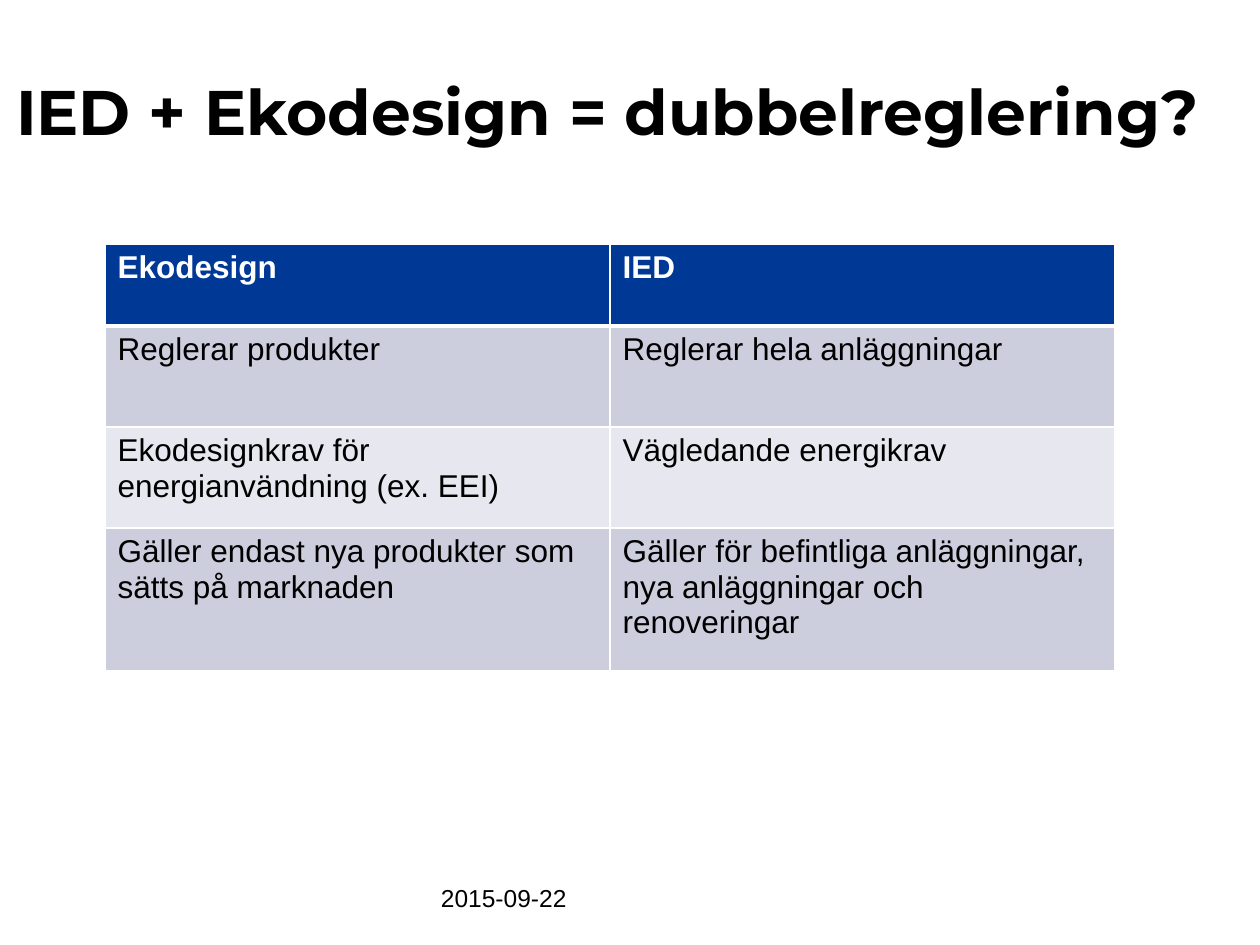
from dataclasses import dataclass

from lxml import etree
from pptx import Presentation
from pptx import util as u
from pptx.dml.color import RGBColor
from pptx.enum import text
from pptx.oxml.ns import qn

SCALE = 914400 / 126  # EMU in one px


@dataclass(frozen=True)
class Theme:
    black: str = "000000"
    white: str = "FFFFFF"
    head: str = "003896"
    bands: tuple = ("CCCEDD", "E7E8EF")
    title: int = 36
    body: int = 18
    date: int = 14
    bold_font: str = "Montserrat"
    font: str = "Arial"


@dataclass(frozen=True)
class Row:
    high: int
    cells: tuple


THEME = Theme()
ROWS = (
    Row(82, ("Ekodesign", "IED")),
    Row(101, ("Reglerar produkter", "Reglerar hela anläggningar")),
    Row(101, ("Ekodesignkrav för energianvändning (ex. EEI)",
              "Vägledande energikrav")),
    Row(143, ("Gäller endast nya produkter som sätts på marknaden",
              "Gäller för befintliga anläggningar, nya anläggningar och renoveringar")),
)


def px(n: int) -> u.Emu:
    return u.Emu(round(n * SCALE))


def box(*sides: int) -> list:
    return [px(n) for n in sides]


def write(frame, words: str, *, size: int, color: str = THEME.black,
          font: str = THEME.font, bold: bool = False, lead=None) -> None:
    para = frame.paragraphs[0]
    para.alignment = text.PP_ALIGN.LEFT
    if lead:
        para.line_spacing = u.Pt(lead)
    run = para.add_run()
    run.text = words
    run.font.size = u.Pt(size)
    run.font.name = font
    run.font.bold = bold
    run.font.color.rgb = RGBColor.from_string(color)


def inset(frame, left: int = 0) -> None:
    frame.word_wrap = True
    frame.auto_size = text.MSO_AUTO_SIZE.NONE
    frame.margin_left = px(left)
    frame.margin_top = frame.margin_right = frame.margin_bottom = 0


def edge(cell, head: bool) -> None:
    """Draw white borders, with a thick rule under the header."""
    props = cell._tc.get_or_add_tcPr()
    for i, side in enumerate(("lnL", "lnR", "lnT", "lnB")):
        wide = 3 if head and side == "lnB" else 1
        line = etree.Element(qn(f"a:{side}"), w=str(u.Pt(wide)))
        fill = etree.SubElement(line, qn("a:solidFill"))
        etree.SubElement(fill, qn("a:srgbClr"), val=THEME.white)
        props.insert(i, line)


def grid(slide, rows: tuple, left: int, top: int, wide: int) -> None:
    cols = len(rows[0].cells)
    high = sum(row.high for row in rows)
    table = slide.shapes.add_table(
        len(rows), cols, *box(left, top, wide, high)).table
    for col in table.columns:
        col.width = px(wide // cols)
    for r, row in enumerate(rows):
        head = r == 0
        table.rows[r].height = px(row.high)
        color = THEME.head if head else THEME.bands[(r - 1) % 2]
        for c, words in enumerate(row.cells):
            cell = table.cell(r, c)
            cell.fill.solid()
            cell.fill.fore_color.rgb = RGBColor.from_string(color)
            edge(cell, head)
            write(cell.text_frame, words, size=THEME.body, bold=head,
                  color=THEME.white if head else THEME.black)


def main() -> None:
    deck = Presentation()
    deck.slide_width, deck.slide_height = box(1260, 945)
    slide = deck.slides.add_slide(deck.slide_layouts[5])

    # Title
    title = slide.shapes.title
    title.left, title.top, title.width, title.height = box(0, 78, 1260, 136)
    inset(title.text_frame, left=16)
    title.text_frame.vertical_anchor = text.MSO_ANCHOR.TOP
    write(title.text_frame, "IED + Ekodesign = dubbelreglering?",
          size=THEME.title, font=THEME.bold_font, bold=True, lead=40)

    # Comparison table
    grid(slide, ROWS, 105, 244, 1010)

    # Date
    date = slide.shapes.add_textbox(*box(441, 849, 262, 63)).text_frame
    inset(date)
    date.vertical_anchor = text.MSO_ANCHOR.BOTTOM
    write(date, "2015-09-22", size=THEME.date)

    deck.save("out.pptx")


if __name__ == "__main__":
    main()
